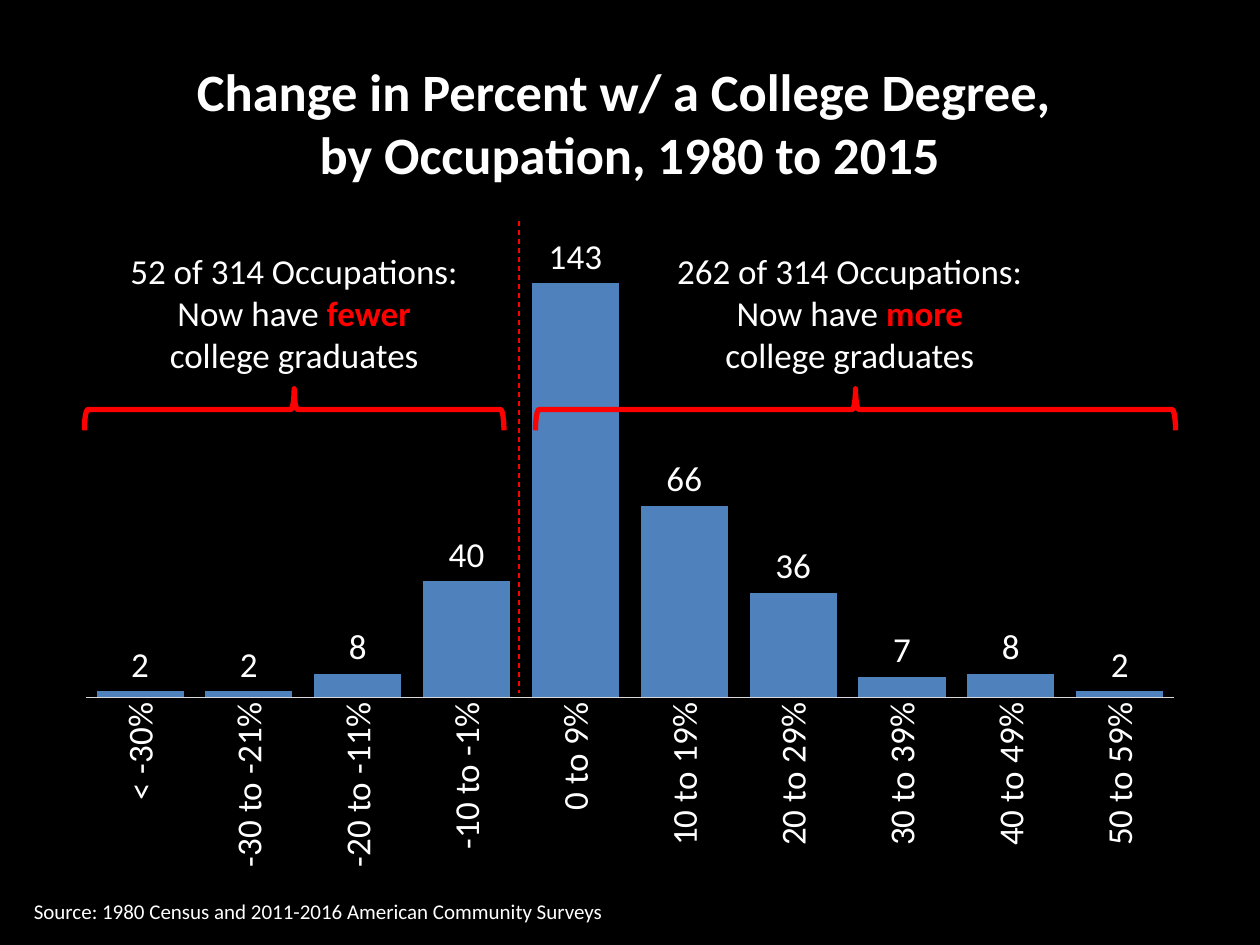
from lxml import etree
from pptx import Presentation
from pptx.chart.data import CategoryChartData
from pptx.dml.color import RGBColor
from pptx.enum.chart import XL_CHART_TYPE, XL_LABEL_POSITION, XL_TICK_MARK
from pptx.enum.dml import MSO_LINE
from pptx.enum.shapes import MSO_CONNECTOR, MSO_SHAPE
from pptx.enum.text import MSO_ANCHOR, MSO_AUTO_SIZE, PP_ALIGN
from pptx.oxml import parse_xml
from pptx.oxml.ns import nsdecls, qn
from pptx.util import Inches, Pt

BLACK = RGBColor(0x00, 0x00, 0x00)
WHITE = RGBColor(0xFF, 0xFF, 0xFF)
RED = RGBColor(0xFF, 0x00, 0x00)
BLUE = RGBColor(0x4F, 0x81, 0xBD)
GRAY = RGBColor(0xD9, 0xD9, 0xD9)
FONT = "Calibri"

TITLE = [["Change in Percent w/ a College Degree, "], ["by Occupation, 1980 to 2015"]]
SOURCE = [["Source: 1980 Census and 2011-2016 American Community Surveys"]]
OCCUPATIONS = [
    ("< -30%", 2), ("-30 to -21%", 2), ("-20 to -11%", 8), ("-10 to -1%", 40),
    ("0 to 9%", 143), ("10 to 19%", 66), ("20 to 29%", 36), ("30 to 39%", 7),
    ("40 to 49%", 8), ("50 to 59%", 2),
]
GROUPS = [
    {"count": 52, "change": "fewer", "text": (0.92, 2.83), "brace": (0.67, 3.33)},
    {"count": 262, "change": "more", "text": (5.26, 2.97), "brace": (4.25, 5.08)},
]
PLOT_AREA = {"x": 0.02, "y": 0.02, "w": 0.96, "h": 0.69}
BRACE_MIDDLE, BRACE_DEPTH = 3.25, 0.33


def style_font(font, size, color=WHITE, bold=False):
    font.name, font.size, font.bold = FONT, Pt(size), bold
    font.color.rgb = color


def write_text(frame, lines, size, align, bold=False, emphasis=None):
    frame.word_wrap = False
    frame.auto_size = MSO_AUTO_SIZE.NONE
    frame.vertical_anchor = MSO_ANCHOR.TOP
    for index, line in enumerate(lines):
        para = frame.add_paragraph() if index else frame.paragraphs[0]
        para.alignment = align
        for words in line:
            span = para.add_run()
            span.text = words
            marked = words == emphasis
            style_font(span.font, size, RED if marked else WHITE, bold or marked)


def add_title(page):
    title = page.shapes.title
    title.left, title.top = Inches(1.43), Inches(0.42)
    title.width, title.height = Inches(7.14), Inches(1.11)
    write_text(title.text_frame, TITLE, 30, PP_ALIGN.CENTER, bold=True)


def add_histogram(page):
    data = CategoryChartData()
    data.categories = [label for label, _ in OCCUPATIONS]
    data.add_series("Series 1", [count for _, count in OCCUPATIONS])
    chart = page.shapes.add_chart(
        XL_CHART_TYPE.COLUMN_CLUSTERED,
        Inches(0.5), Inches(1.75), Inches(9), Inches(5.33), data).chart
    chart.has_legend = chart.has_title = False
    style_font(chart.font, 10, BLACK)

    plot = chart.plots[0]
    plot.gap_width, plot.overlap, plot.vary_by_categories = 25, -27, False
    fill = plot.series[0].format.fill
    fill.solid()
    fill.fore_color.rgb = BLUE
    plot.has_data_labels = True
    labels = plot.data_labels
    labels.show_value = True
    labels.position = XL_LABEL_POSITION.OUTSIDE_END
    style_font(labels.font, 20)

    values = chart.value_axis
    values.visible = values.has_major_gridlines = False
    values.minimum_scale, values.maximum_scale = 0, 160
    axis = chart.category_axis
    axis.major_tick_mark = axis.minor_tick_mark = XL_TICK_MARK.NONE
    axis.format.line.color.rgb = GRAY
    axis.format.line.width = Pt(0.75)
    style_font(axis.tick_labels.font, 20)
    turned = chart.element.find(".//" + qn("c:catAx")).find(".//" + qn("a:bodyPr"))
    turned.set("rot", "-5400000")
    turned.set("vert", "horz")
    place_plot(chart)


def place_plot(chart):
    area = chart.element.find(".//" + qn("c:plotArea"))
    for layout in area.findall(qn("c:layout")):
        area.remove(layout)
    settings = [("layoutTarget", "inner"), ("xMode", "edge"), ("yMode", "edge")]
    settings += PLOT_AREA.items()
    tags = "".join(f'<c:{name} val="{value}"/>' for name, value in settings)
    area.insert(0, parse_xml(
        f'<c:layout {nsdecls("c")}><c:manualLayout>{tags}</c:manualLayout></c:layout>'))


def add_group(page, group):
    left, width = group["brace"]
    brace = page.shapes.add_shape(
        MSO_SHAPE.RIGHT_BRACE,
        Inches(left + (width - BRACE_DEPTH) / 2), Inches(BRACE_MIDDLE - width / 2),
        Inches(BRACE_DEPTH), Inches(width))
    brace.rotation = 270
    brace.shadow.inherit = False
    brace.fill.background()
    brace.line.color.rgb = RED
    brace.line.width = Pt(3)

    left, width = group["text"]
    box = page.shapes.add_textbox(Inches(left), Inches(1.93), Inches(width), Inches(1.11))
    lines = [[f"{group['count']} of 314 Occupations:"],
             ["Now have ", group["change"]], ["college graduates"]]
    write_text(box.text_frame, lines, 20, PP_ALIGN.CENTER, emphasis=group["change"])


def add_divider(page):
    divider = page.shapes.add_connector(
        MSO_CONNECTOR.STRAIGHT, Inches(4.12), Inches(1.75), Inches(4.12), Inches(5.5))
    divider.line.color.rgb = RED
    divider.line.width = Pt(0.75)
    divider.line.dash_style = MSO_LINE.DASH
    etree.SubElement(divider.element.spPr, qn("a:effectLst"))


def main():
    """Build the slide on changes in college degrees by occupation."""
    deck = Presentation()
    deck.slide_width, deck.slide_height = Inches(10), Inches(7.5)
    page = deck.slides.add_slide(deck.slide_layouts[5])
    page.background.fill.solid()
    page.background.fill.fore_color.rgb = BLACK
    add_histogram(page)
    add_title(page)
    source = page.shapes.add_textbox(Inches(0.17), Inches(7.08), Inches(4.73), Inches(0.3))
    write_text(source.text_frame, SOURCE, 12, PP_ALIGN.LEFT)
    for group in GROUPS:
        add_group(page, group)
    add_divider(page)
    deck.save("out.pptx")


if __name__ == "__main__":
    main()
